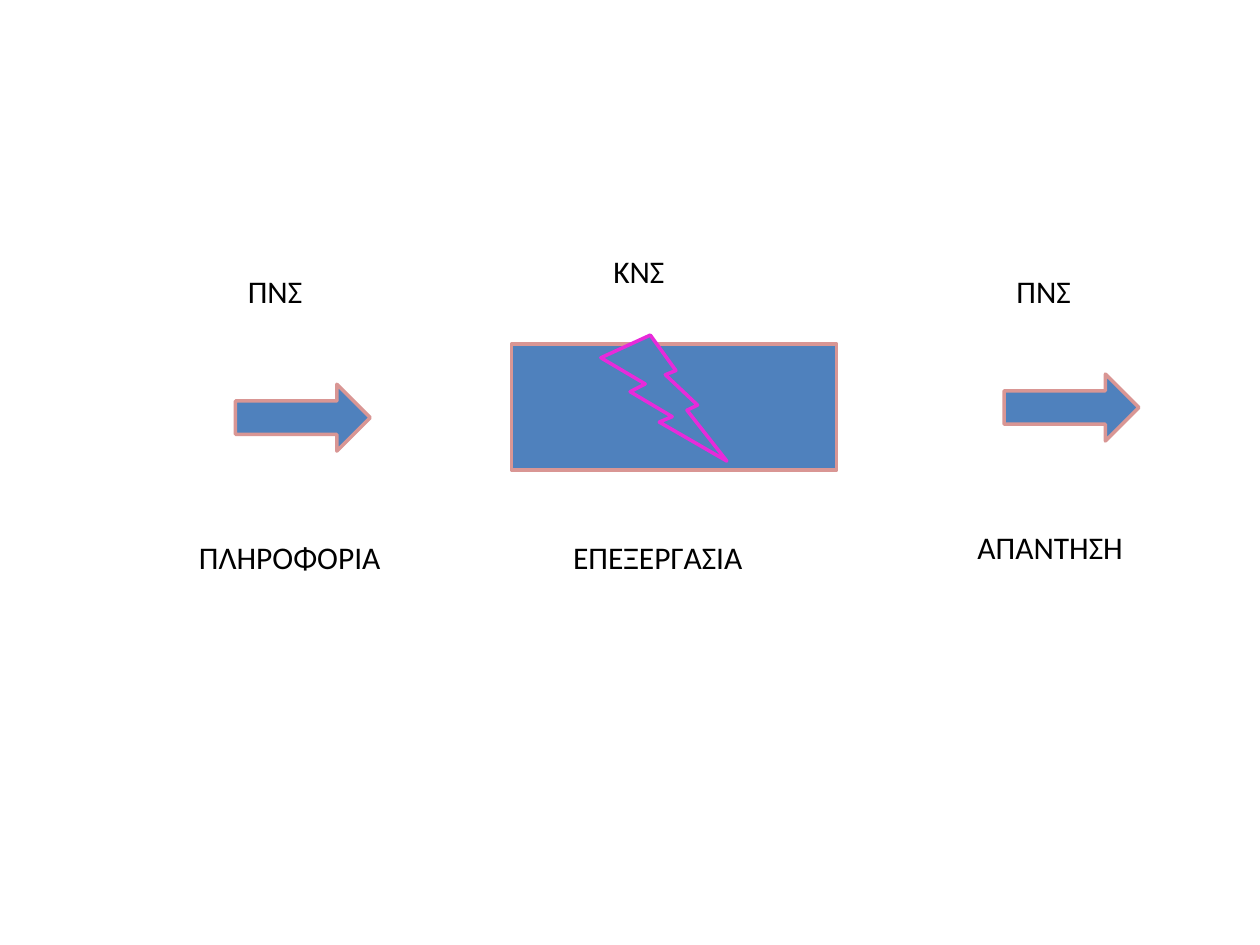
import pptx
import pptx.dml.color
import pptx.enum.shapes
import pptx.enum.text
import pptx.util

Pt = pptx.util.Pt
SHAPE = pptx.enum.shapes.MSO_SHAPE
FONT = {"name": "Calibri", "size": Pt(18)}


def rgb(value):
    """Return the colour for a hex string."""
    return pptx.dml.color.RGBColor.from_string(value)


def add_shape(s, kind, box, line):
    """Add a blue preset shape with a coloured outline."""
    sp = s.shapes.add_shape(kind, *map(Pt, box))
    sp.shadow.inherit = False
    sp.fill.solid()
    sp.fill.fore_color.rgb = rgb("4F81BD")
    sp.line.color.rgb = rgb(line)
    sp.line.width = Pt(2)


def add_text(s, text, x, y, w, wrap=False):
    """Add a one-line caption."""
    tf = s.shapes.add_textbox(Pt(x), Pt(y), Pt(w), Pt(28.8)).text_frame
    tf.word_wrap = wrap
    tf.auto_size = pptx.enum.text.MSO_AUTO_SIZE.SHAPE_TO_FIT_TEXT
    r = tf.paragraphs[0].add_run()
    r.text = text
    r.font.color.rgb = rgb("000000")
    for name, value in FONT.items():
        setattr(r.font, name, value)


def add_signal(s, box, label, indent, label_w):
    """Draw a peripheral signal arrow with its heading and label."""
    x, y, w, h = box
    add_shape(s, SHAPE.RIGHT_ARROW, box, "D99694")
    add_text(s, "ΠΝΣ", x, 151.9, 46.1)
    add_text(s, label, x - indent, y + 84.2, label_w, wrap=True)


def add_processing(s, box):
    """Draw the central processing block with its bolt and captions."""
    x, y, w, h = box
    add_shape(s, SHAPE.RECTANGLE, box, "D99694")
    add_shape(s, SHAPE.LIGHTNING_BOLT, (x + 51.1, y - 5.1, h, h), "E82ADA")
    add_text(s, "ΚΝΣ", x + 51.1, y - 56.2, 43.9)
    add_text(s, "ΕΠΕΞΕΡΓΑΣΙΑ", x + 28.1, y + 107.2, 112.3)


def main():
    """Build and save the slide."""
    prs = pptx.Presentation()
    prs.slide_width, prs.slide_height = Pt(720), Pt(540)
    s = prs.slides.add_slide(prs.slide_layouts[6])
    add_signal(s, (134.6, 219.6, 77, 38.2), "ΠΛΗΡΟΦΟΡΙΑ", 28, 135.4)
    add_processing(s, (292.3, 196.6, 185.8, 72))
    add_signal(s, (573.8, 213.8, 77, 38.2), "ΑΠΑΝΤΗΣΗ", 22.3, 129.6)
    prs.save("out.pptx")


if __name__ == "__main__":
    main()
